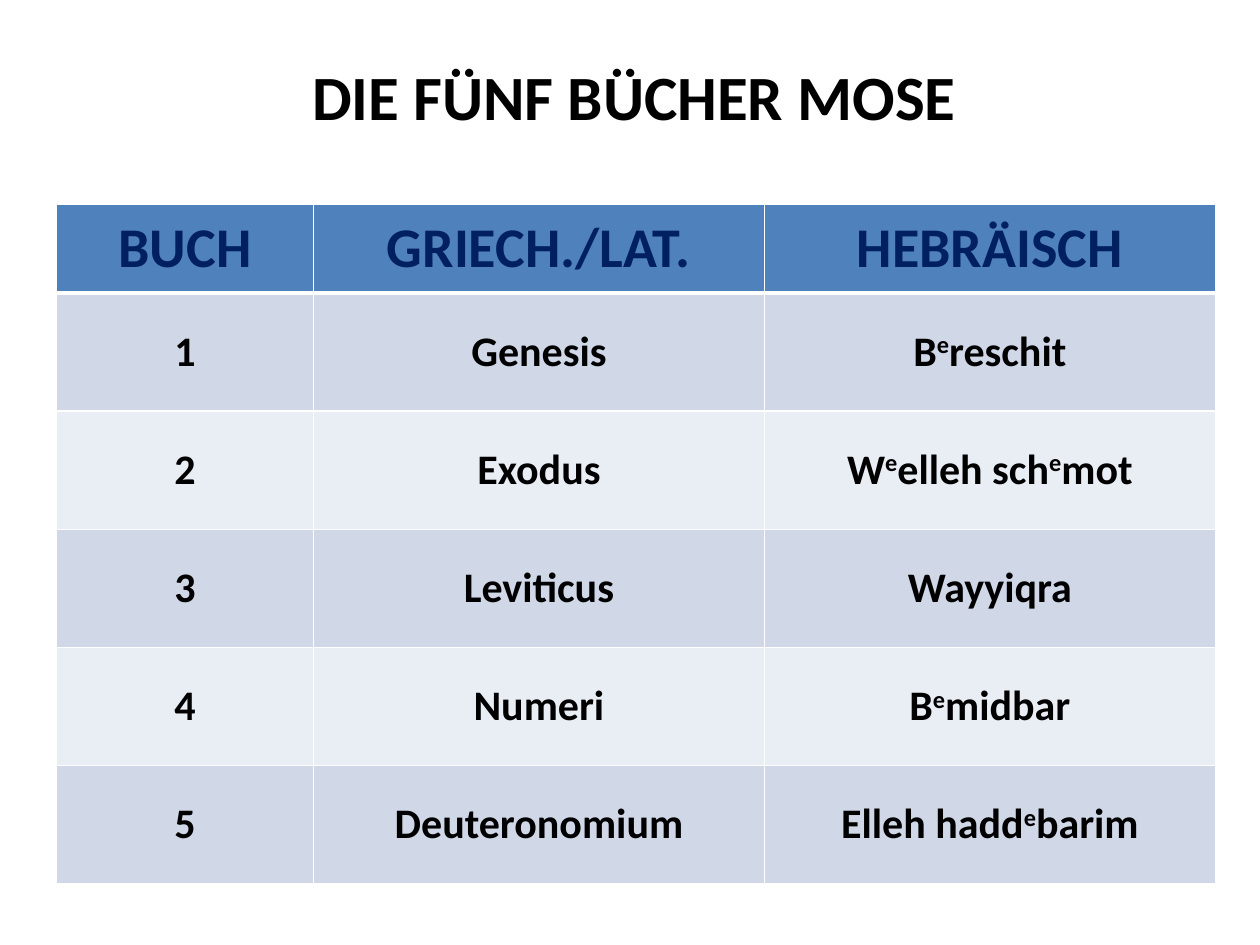
import pptx
import pptx.util
import pptx.dml.color
import pptx.enum.text
import pptx.oxml.ns
import lxml.etree
from dataclasses import dataclass

Cm = pptx.util.Cm
Pt = pptx.util.Pt
Rgb = pptx.dml.color.RGBColor.from_string
qn = pptx.oxml.ns.qn
mid = pptx.enum.text.MSO_ANCHOR.MIDDLE


@dataclass
class Theme:
    font: str = "Calibri"
    ink: str = "000000"
    navy: str = "002060"
    blue: str = "4F81BD"
    dark: str = "D0D8E8"
    light: str = "E9EDF4"
    white: str = "FFFFFF"
    title: int = 36
    head: int = 32
    body: int = 24


theme = Theme()


def style(par, size, color):
    par.alignment = pptx.enum.text.PP_ALIGN.CENTER
    for run in par.runs:
        run.font.name = theme.font
        run.font.size = Pt(size)
        run.font.bold = True
        run.font.color.rgb = Rgb(color)


def border(cell, side, width):
    line = lxml.etree.SubElement(cell._tc.get_or_add_tcPr(), qn("a:ln" + side), w=str(Pt(width)))
    fill = lxml.etree.SubElement(line, qn("a:solidFill"))
    lxml.etree.SubElement(fill, qn("a:srgbClr"), val=theme.white)


deck = pptx.Presentation()
deck.slide_width, deck.slide_height = Cm(25.4), Cm(19.05)
slide = deck.slides.add_slide(deck.slide_layouts[5])

title = slide.shapes.title
title.left, title.top, title.width, title.height = Cm(1.09), Cm(1.12), Cm(23.39), Cm(1.6)
title.fill.solid()
title.fill.fore_color.rgb = Rgb(theme.white)
tint = title._element.spPr.find(".//" + qn("a:srgbClr"))
lxml.etree.SubElement(tint, qn("a:alpha"), val="60000")
frame = title.text_frame
frame.text = "DIE FÜNF BÜCHER MOSE"
frame.auto_size = pptx.enum.text.MSO_AUTO_SIZE.NONE
frame.vertical_anchor = mid
style(frame.paragraphs[0], theme.title, theme.ink)

books = [
    ("Genesis", "B^e^reschit"),
    ("Exodus", "W^e^elleh sch^e^mot"),
    ("Leviticus", "Wayyiqra"),
    ("Numeri", "B^e^midbar"),
    ("Deuteronomium", "Elleh hadd^e^barim"),
]
rows = [("BUCH", "GRIECH./LAT.", "HEBRÄISCH")]
rows += [(str(num), *names) for num, names in enumerate(books, 1)]
wide = [Cm(5.18), Cm(9.09), Cm(9.09)]
high = [Cm(1.8)] + [Cm(2.38)] * len(books)

grid = slide.shapes.add_table(len(rows), len(wide), Cm(1.14), Cm(4.11), sum(wide), sum(high)).table
for col, width in zip(grid.columns, wide):
    col.width = width
for row, height in zip(grid.rows, high):
    row.height = height

for r, row in enumerate(rows):
    if r == 0:
        fill, size, color = theme.blue, theme.head, theme.navy
    else:
        fill, size, color = (theme.dark if r % 2 else theme.light), theme.body, theme.ink
    for c, text in enumerate(row):
        cell = grid.cell(r, c)
        cell.vertical_anchor = mid
        for side in "LRTB":
            thick = (r, side) in [(0, "B"), (1, "T")]
            border(cell, side, 3 if thick else 1)
        cell.fill.solid()
        cell.fill.fore_color.rgb = Rgb(fill)
        par = cell.text_frame.paragraphs[0]
        for n, part in enumerate(text.split("^")):
            run = par.add_run()
            run.text = part
            if n % 2:
                run._r.get_or_add_rPr().set("baseline", "30000")
        style(par, size, color)

deck.save("out.pptx")
